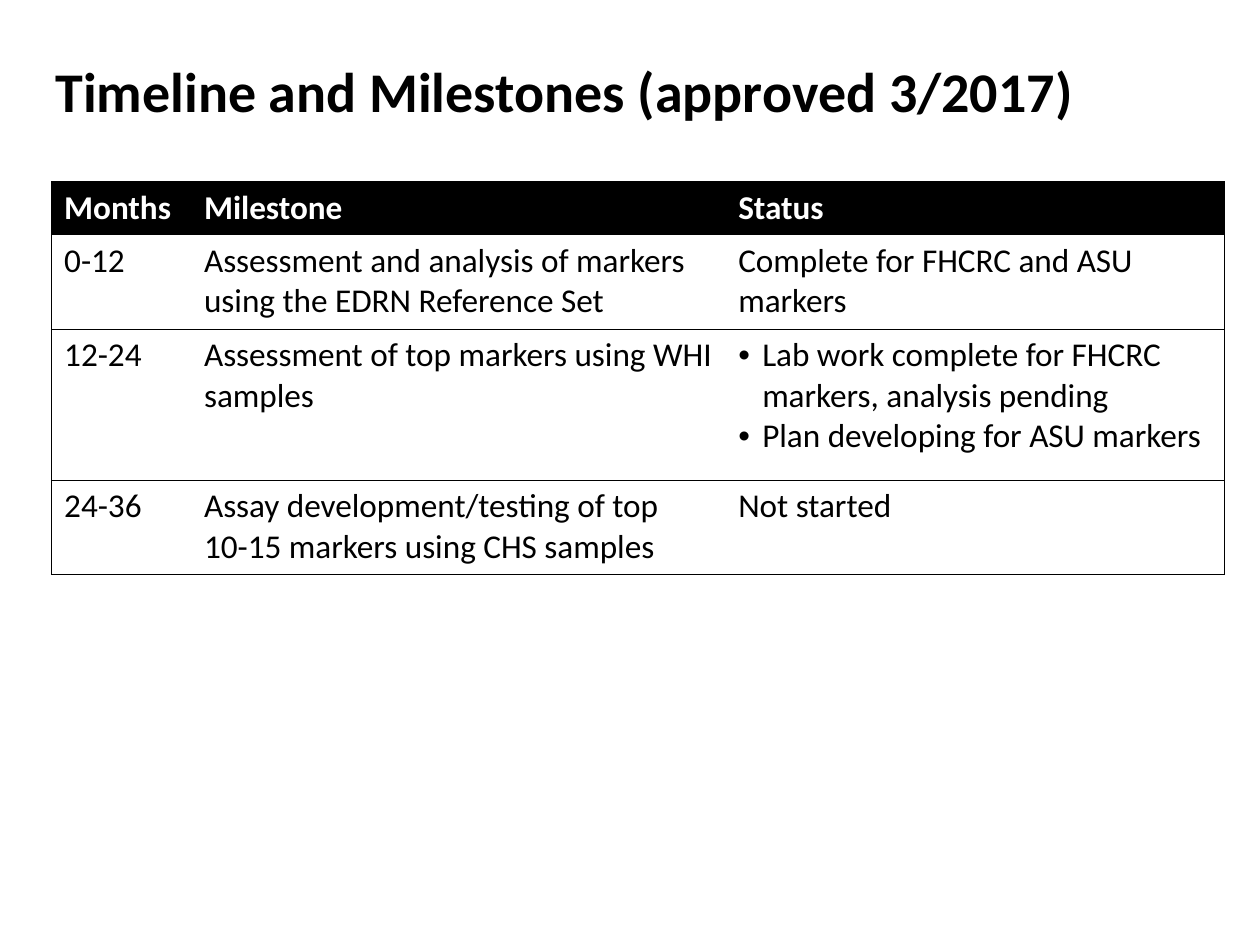
"""Build the timeline and milestones slide."""
from pptx import Presentation
from pptx import util as u
from pptx.dml.color import RGBColor
from pptx.enum import text
from pptx.oxml.ns import qn
from lxml import etree

BLACK = RGBColor(0, 0, 0)
WHITE = RGBColor(255, 255, 255)

TITLE = "Timeline and Milestones (approved 3/2017)"
ROWS = [
    ("Months", "Milestone", "Status"),
    ("0-12", "Assessment and analysis of markers using the EDRN Reference Set",
     "Complete for FHCRC and ASU markers"),
    ("12-24", "Assessment of top markers using WHI samples",
     ["Lab work complete for FHCRC markers, analysis pending",
      "Plan developing for ASU markers"]),
    ("24-36", "Assay development/testing of top\n10-15 markers using CHS samples",
     "Not started"),
]
COLUMN_WIDTHS = [1.11, 4.24, 3.96]
ROW_HEIGHTS = [0.42, 0.75, 1.2, 0.75]
TITLE_FONT = {"name": "Calibri", "size": u.Pt(32), "bold": True}
HEADER_FONT = {"name": "Calibri", "size": u.Pt(19), "bold": True}
BODY_FONT = {**HEADER_FONT, "bold": False}


def write(para, words, font, color):
    para.text = words
    for span in para.runs:
        for name, value in font.items():
            setattr(span.font, name, value)
        span.font.color.rgb = color


def add_bullet(para):
    props = para._p.get_or_add_pPr()
    props.set("marL", str(u.Inches(0.19)))
    props.set("indent", str(-u.Inches(0.19)))
    etree.SubElement(props, qn("a:buFont"), typeface="Arial")
    etree.SubElement(props, qn("a:buChar"), char="•")


def set_borders(cell, visible):
    props = cell._tc.get_or_add_tcPr()
    for side in "LRTB":
        line = etree.SubElement(props, qn(f"a:ln{side}"), w=str(u.Pt(0.5)))
        if side in visible:
            fill = etree.SubElement(line, qn("a:solidFill"))
            etree.SubElement(fill, qn("a:srgbClr"), val=str(BLACK))
        else:
            etree.SubElement(line, qn("a:noFill"))


def add_title(page):
    title = page.shapes.title
    place = {"left": 0.34, "top": 0.33, "width": 8.62, "height": 0.84}
    for name, value in place.items():
        setattr(title, name, u.Inches(value))
    title.text_frame.vertical_anchor = text.MSO_ANCHOR.MIDDLE
    para = title.text_frame.paragraphs[0]
    para.alignment = text.PP_ALIGN.LEFT
    para.line_spacing = 0.9
    write(para, TITLE, TITLE_FONT, BLACK)


def fill_cell(cell, content, font, color):
    bulleted = isinstance(content, list)
    frame = cell.text_frame
    for index, words in enumerate(content if bulleted else [content]):
        para = frame.add_paragraph() if index else frame.paragraphs[0]
        write(para, words, font, color)
        if bulleted:
            add_bullet(para)


def add_milestones(page):
    table = page.shapes.add_table(
        len(ROWS), len(COLUMN_WIDTHS), u.Inches(0.41), u.Inches(1.44),
        u.Inches(sum(COLUMN_WIDTHS)), u.Inches(sum(ROW_HEIGHTS))).table
    table.horz_banding = False
    for column, width in zip(table.columns, COLUMN_WIDTHS):
        column.width = u.Inches(width)
    for row, height in zip(table.rows, ROW_HEIGHTS):
        row.height = u.Inches(height)
    outer_sides = ["L"] + [""] * (len(COLUMN_WIDTHS) - 2) + ["R"]
    for row_index, contents in enumerate(ROWS):
        header = row_index == 0
        font, color = (HEADER_FONT, WHITE) if header else (BODY_FONT, BLACK)
        for column_index, content in enumerate(contents):
            cell = table.cell(row_index, column_index)
            fill_cell(cell, content, font, color)
            set_borders(cell, "TB" + outer_sides[column_index])
            cell.fill.solid()
            cell.fill.fore_color.rgb = BLACK if header else WHITE


def main():
    deck = Presentation()
    deck.slide_width, deck.slide_height = u.Inches(10), u.Inches(7.5)
    page = deck.slides.add_slide(deck.slide_layouts.get_by_name("Title Only"))
    add_title(page)
    add_milestones(page)
    deck.save("out.pptx")


if __name__ == "__main__":
    main()
